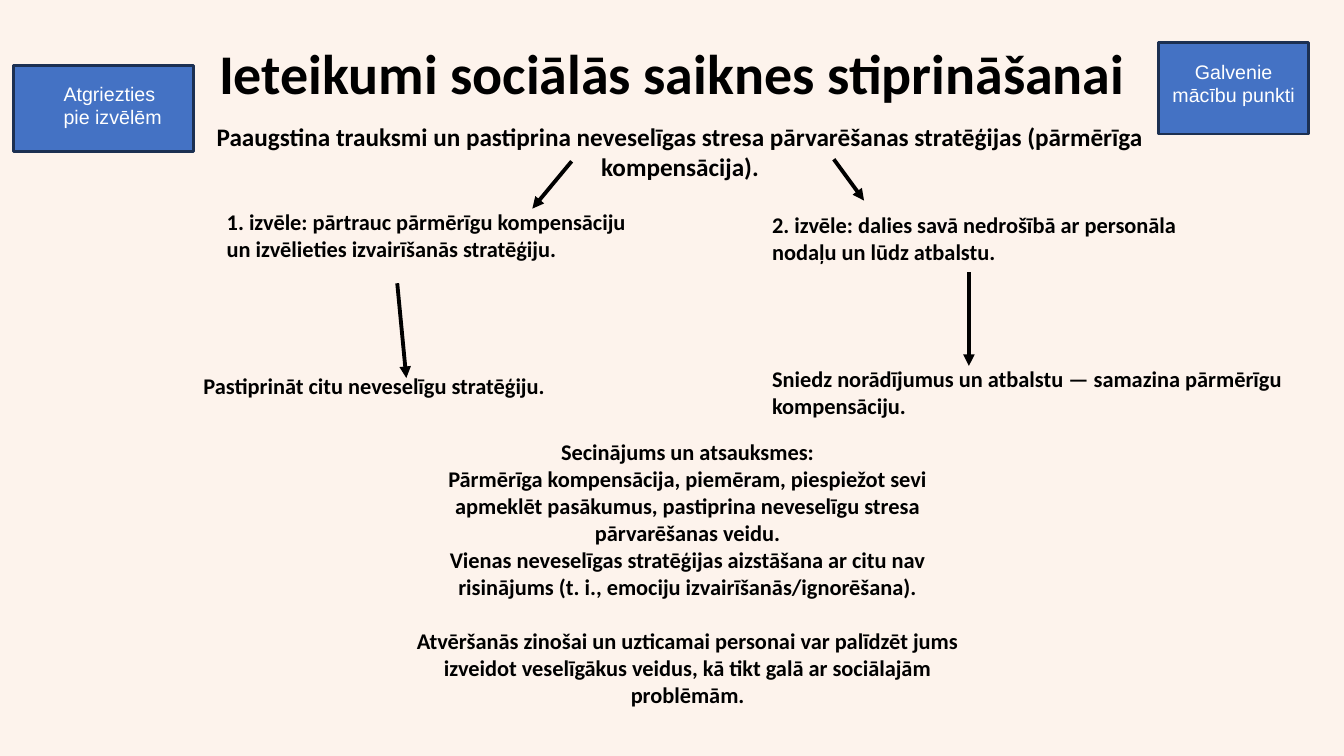
from lxml import etree
from pptx import Presentation
from pptx.dml.color import RGBColor
from pptx.enum.shapes import MSO_CONNECTOR, MSO_SHAPE
from pptx.enum.text import MSO_ANCHOR, MSO_AUTO_SIZE, PP_ALIGN
from pptx.oxml.ns import qn
from pptx.util import Inches, Pt

LEFT, CENTER = PP_ALIGN.LEFT, PP_ALIGN.CENTER
TOP = MSO_ANCHOR.TOP
NO_AUTOFIT = MSO_AUTO_SIZE.NONE
STRAIGHT = MSO_CONNECTOR.STRAIGHT
RECTANGLE = MSO_SHAPE.RECTANGLE

BACKGROUND = RGBColor(0xFD, 0xF3, 0xEC)
BLACK = RGBColor(0, 0, 0)
WHITE = RGBColor(0xFF, 0xFF, 0xFF)
BUTTON_BLUE = RGBColor(0x44, 0x72, 0xC4)
BUTTON_BORDER = RGBColor(0x1C, 0x30, 0x52)

CONCLUSIONS = [
    "Secinājums un atsauksmes:",
    "Pārmērīga kompensācija, piemēram, piespiežot sevi apmeklēt pasākumus, "
    "pastiprina neveselīgu stresa pārvarēšanas veidu.",
    "Vienas neveselīgas stratēģijas aizstāšana ar citu nav risinājums "
    "(t. i., emociju izvairīšanās/ignorēšana).",
    "Atvēršanās zinošai un uzticamai personai var palīdzēt jums izveidot "
    "veselīgākus veidus, kā tikt galā ar sociālajām problēmām.",
]


def write_text(shape, text, size, alignment=LEFT, font="Calibri", color=BLACK,
               bold=True, insets=(0.1, 0.05, 0.1, 0.05)):
    """Fill a shape with text; insets run left, top, right, bottom in inches."""
    frame = shape.text_frame
    frame.text = text
    frame.word_wrap = True
    frame.auto_size = NO_AUTOFIT
    frame.vertical_anchor = TOP
    (frame.margin_left, frame.margin_top,
     frame.margin_right, frame.margin_bottom) = map(Inches, insets)
    for paragraph in frame.paragraphs:
        paragraph.alignment = alignment
        for run in paragraph.runs:
            run.font.name = font
            run.font.size = Pt(size)
            run.font.bold = bold
            run.font.color.rgb = color
    return frame


def add_text(slide, box, text, size, alignment=LEFT):
    shape = slide.shapes.add_textbox(*map(Inches, box))
    return write_text(shape, text, size, alignment)


def add_arrow(slide, start, end):
    arrow = slide.shapes.add_connector(STRAIGHT, *map(Inches, start + end))
    arrow.line.color.rgb = BLACK
    arrow.line.width = Pt(2.75)
    etree.SubElement(arrow.line._get_or_add_ln(), qn("a:tailEnd"), type="triangle")
    etree.SubElement(arrow._element.spPr, qn("a:effectLst"))


def add_heading(slide, box):
    left, top, width, height = box
    title = slide.shapes.title
    title.left, title.top = Inches(left), Inches(top)
    title.width, title.height = Inches(width), Inches(height)
    frame = write_text(title, "Ieteikumi sociālās saiknes stiprināšanai", 40, CENTER)
    frame.paragraphs[0].line_spacing = 1.5
    add_text(slide, (left + 1.83, top + 1.15, 9.83, 0.71),
             "Paaugstina trauksmi un pastiprina neveselīgas stresa pārvarēšanas "
             "stratēģijas (pārmērīga kompensācija).", 18, CENTER)


def add_branch(slide, choice_box, choice, outcome_box, outcome, arrows):
    """Add a choice, its outcome and the arrows leading to each of them."""
    add_text(slide, choice_box, choice, 16)
    add_text(slide, outcome_box, outcome, 16)
    for start, end in arrows:
        add_arrow(slide, start, end)


def add_conclusions(slide, box):
    frame = add_text(slide, box, "\n".join(CONCLUSIONS), 16, CENTER)
    frame.paragraphs[-1].space_before = Pt(19.5)


def add_button(slide, box, text, alignment, insets):
    button = slide.shapes.add_shape(RECTANGLE, *map(Inches, box))
    button.shadow.inherit = False
    button.fill.solid()
    button.fill.fore_color.rgb = BUTTON_BLUE
    button.line.color.rgb = BUTTON_BORDER
    button.line.width = Pt(2)
    write_text(button, text, 14, alignment, "Arial", WHITE, False, insets)


def build_slide(presentation):
    slide = presentation.slides.add_slide(presentation.slide_layouts[5])
    slide.background.fill.solid()
    slide.background.fill.fore_color.rgb = BACKGROUND
    add_heading(slide, (0, 0, 13.33, 1.11))
    add_branch(
        slide,
        (2.15, 2.02, 4.29, 0.64),
        "1. izvēle: pārtrauc pārmērīgu kompensāciju un izvēlieties "
        "izvairīšanās stratēģiju.",
        (1.92, 3.64, 5.43, 0.37),
        "Pastiprināt citu neveselīgu stratēģiju.",
        [((5.67, 1.6), (5.28, 2.07)), ((3.94, 2.81), (4.03, 3.75))])
    add_branch(
        slide,
        (7.56, 2.05, 4.83, 0.64),
        "2. izvēle: dalies savā nedrošībā ar personāla nodaļu un lūdz atbalstu.",
        (7.56, 3.57, 5.58, 0.64),
        "Sniedz norādījumus un atbalstu — samazina pārmērīgu kompensāciju.",
        [((8.27, 1.58), (8.57, 1.99)), ((9.61, 2.7), (9.61, 3.63))])
    add_conclusions(slide, (4.03, 4.3, 5.58, 2.79))
    add_button(slide, (11.49, 0.42, 1.49, 0.91), "Galvenie mācību punkti",
               CENTER, (0.1, 0.17, 0.1, 0.05))
    add_button(slide, (0.13, 0.65, 1.79, 0.85), "Atgriezties pie izvēlēm",
               LEFT, (0.5, 0.16, 0.19, 0.05))


def main():
    presentation = Presentation()
    presentation.slide_width = Inches(13.33)
    presentation.slide_height = Inches(7.5)
    build_slide(presentation)
    presentation.save("out.pptx")


if __name__ == "__main__":
    main()
